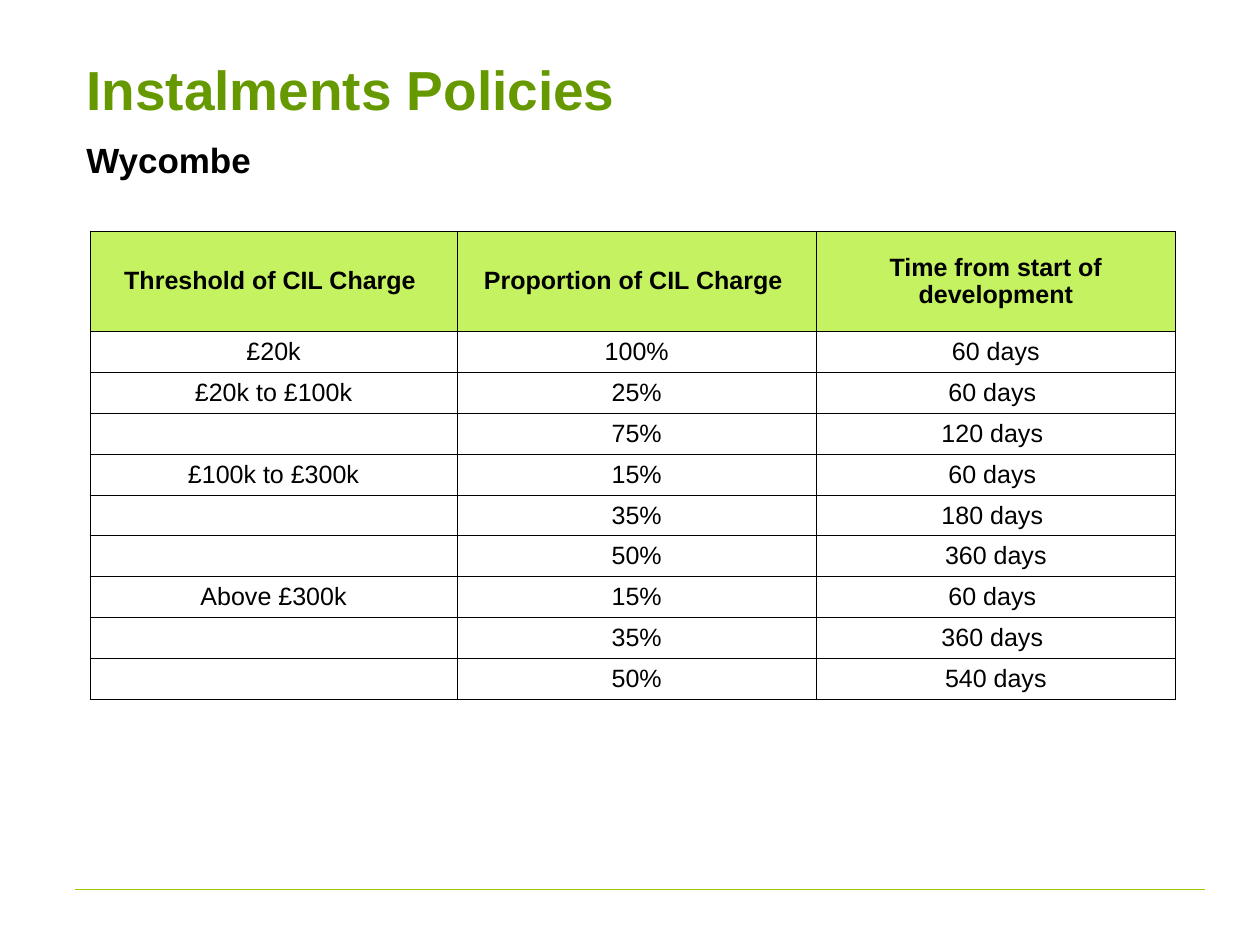
from lxml import etree
from pptx import Presentation
from pptx import util as u
from pptx.dml.color import RGBColor
from pptx.enum import shapes, text
from pptx.oxml import ns

COLOURS = {"title": "669900", "ink": "000000", "header": "C5F260",
           "body": "FFFFFF", "rule": "99CC00"}
WIDTH, HEIGHT = 14, 10.5
LEFT = 0.83
HEADINGS = [
    ("Instalments Policies", 0.42, 1.13, text.MSO_ANCHOR.MIDDLE, 0,
     {"size": 44, "bold": True, "colour": "title"}),
    ("Wycombe", 1.47, 0.71, text.MSO_ANCHOR.TOP, 3,
     {"size": 28, "bold": True, "colour": "ink"}),
]
ROWS = [
    ("Threshold of CIL Charge ", "Proportion of CIL Charge ", "Time from start of development"),
    ("£20k", "100%", "60 days"),
    ("£20k to £100k", "25%", "60 days "),
    ("", "75%", "120 days "),
    ("£100k to £300k", "15%", "60 days "),
    ("", "35%", "180 days "),
    ("", "50%", "360 days"),
    ("Above £300k", "15%", "60 days "),
    ("", "35%", "360 days "),
    ("", "50%", "540 days"),
]
COLUMN_WIDTHS = [4.08, 3.99, 3.99]
ROW_HEIGHTS = [1.11, 0.46] + [0.45] * (len(ROWS) - 2)
TABLE_LEFT, TABLE_TOP = 1, 2.57


def set_values(target, values):
    for name, value in values.items():
        setattr(target, name, value)


def write(para, words, look):
    span = para.add_run()
    span.text = words
    set_values(span.font, {"name": "Arial", "size": u.Pt(look["size"]), "bold": look["bold"]})
    span.font.color.rgb = RGBColor.from_string(COLOURS[look["colour"]])


def insets(side, end):
    return {"margin_left": u.Inches(side), "margin_right": u.Inches(side),
            "margin_top": u.Inches(end), "margin_bottom": u.Inches(end)}


def add_borders(cell):
    properties = cell._tc.get_or_add_tcPr()
    for index, edge in enumerate(("lnL", "lnR", "lnT", "lnB")):
        line = etree.Element(ns.qn(f"a:{edge}"), w=str(u.Pt(0.75)))
        fill = etree.SubElement(line, ns.qn("a:solidFill"))
        etree.SubElement(fill, ns.qn("a:srgbClr"), val=COLOURS["ink"])
        properties.insert(index, line)


def add_heading(page, words, top, height, anchor, space, look):
    box = page.shapes.add_textbox(u.Inches(LEFT), u.Inches(top),
                                  u.Inches(WIDTH * 0.9), u.Inches(height))
    set_values(box.text_frame, {"word_wrap": True, "vertical_anchor": anchor,
                                **insets(0.13, 0.07)})
    para = box.text_frame.paragraphs[0]
    para.space_before = u.Pt(space)
    write(para, words, look)


def add_policy_table(page):
    table = page.shapes.add_table(
        len(ROWS), len(COLUMN_WIDTHS), u.Inches(TABLE_LEFT), u.Inches(TABLE_TOP),
        u.Inches(sum(COLUMN_WIDTHS)), u.Inches(sum(ROW_HEIGHTS))).table
    for column, width in zip(table.columns, COLUMN_WIDTHS):
        column.width = u.Inches(width)
    for row, height in zip(table.rows, ROW_HEIGHTS):
        row.height = u.Inches(height)
    for r, entries in enumerate(ROWS):
        look = {"size": 20, "bold": r == 0, "colour": "ink"}
        for c, words in enumerate(entries):
            cell = table.cell(r, c)
            set_values(cell, {"vertical_anchor": text.MSO_ANCHOR.MIDDLE, **insets(0.12, 0.06)})
            cell.fill.solid()
            cell.fill.fore_color.rgb = RGBColor.from_string(COLOURS["body" if r else "header"])
            add_borders(cell)
            para = cell.text_frame.paragraphs[0]
            para.alignment = text.PP_ALIGN.CENTER
            if words:
                write(para, words, look)


def add_footer_rule(page):
    top = u.Inches(HEIGHT * 0.941)
    rule = page.shapes.add_connector(shapes.MSO_CONNECTOR.STRAIGHT, u.Inches(LEFT), top,
                                     u.Inches(13.39), top)
    rule.line.width = u.Pt(0.75)
    rule.line.color.rgb = RGBColor.from_string(COLOURS["rule"])
    etree.SubElement(rule._element.spPr, ns.qn("a:effectLst"))


def main():
    deck = Presentation()
    set_values(deck, {"slide_width": u.Inches(WIDTH), "slide_height": u.Inches(HEIGHT)})
    page = deck.slides.add_slide(deck.slide_layouts[6])
    add_footer_rule(page)
    for heading in HEADINGS:
        add_heading(page, *heading)
    add_policy_table(page)
    deck.save("out.pptx")


if __name__ == "__main__":
    main()
